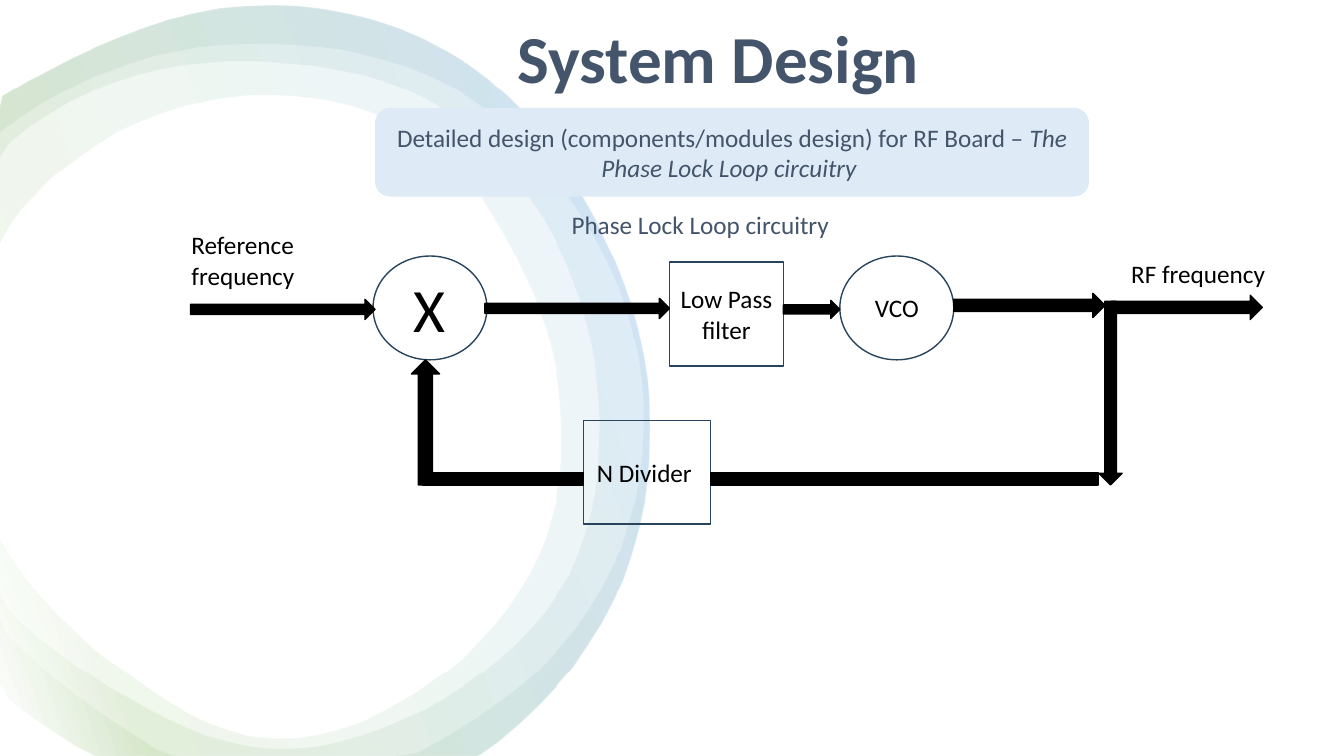
import math

from lxml import etree
from pptx import Presentation
from pptx import util as u
from pptx.dml import color
from pptx.enum import shapes, text
from pptx.oxml import ns

PX = 9144
WIDTH, HEIGHT = 1333, 750
SLATE, BLACK, NAVY, PALE = "44546A", "000000", "28445D", "DEEBF7"
WHITE, GREEN, BLUE = "FFFFFF", "70AD47", "5B9BD5"
kinds = shapes.MSO_SHAPE
rgb = color.RGBColor.from_string
centered = {"anchor": text.MSO_ANCHOR.MIDDLE, "align": text.PP_ALIGN.CENTER}
from_top_left = {"anchor": text.MSO_ANCHOR.TOP, "align": text.PP_ALIGN.LEFT}


def loop_edge(radii, center=(270, 400), steps=8):
    count = len(radii)
    edge = []
    for spoke in range(count):
        a, b, c, d = (radii[(spoke + shift) % count] for shift in (-1, 0, 1, 2))
        for step in range(steps):
            t = step / steps
            radius = (2 * b + (c - a) * t + (2 * a - 5 * b + 4 * c - d) * t ** 2
                      + (3 * b - a - 3 * c + d) * t ** 3) / 2
            angle = math.tau * (spoke + t) / count
            x = center[0] + radius * math.cos(angle)
            y = center[1] + radius * math.sin(angle)
            edge.append((max(x, 0), min(y, HEIGHT)))
    return edge


def write(shape, runs, ink, anchor, align, size=18, spacing=1.0, bold=False):
    frame = shape.text_frame
    line = frame.paragraphs[0]
    for target, formats in (
        (frame, {"word_wrap": True, "vertical_anchor": anchor}),
        (line, {"alignment": align, "line_spacing": spacing}),
    ):
        for key, value in formats.items():
            setattr(target, key, value)
    for wording, italic in runs:
        run = line.add_run()
        run.text = wording
        formats = {"name": "Calibri", "size": u.Pt(size), "bold": bold, "italic": italic}
        for key, value in formats.items():
            setattr(run.font, key, value)
        run.font.color.rgb = rgb(ink)


deck = Presentation()
deck.slide_width, deck.slide_height = WIDTH * PX, HEIGHT * PX
slide = deck.slides.add_slide(deck.slide_layouts[6])
canvas = slide.shapes

outer_radii = [373, 390, 405, 420, 392, 400, 400, 420, 395, 394, 388, 368]
inner_radii = {
    "broad": [323, 339, 338, 342, 324, 335, 340, 370, 357, 338, 337, 323],
    "wide": [285, 304, 318, 332, 303, 300, 310, 314, 309, 305, 302, 281],
    "thin": [367, 374, 372, 380, 350, 350, 350, 385, 369, 356, 360, 358],
}
tints = {2: WHITE, 16: GREEN, 85: BLUE, 100: WHITE}
for radii in inner_radii.values():
    rim = loop_edge(outer_radii)
    hole = loop_edge(radii)[::-1]
    builder = canvas.build_freeform(*rim[0], scale=PX)
    builder.add_line_segments(rim[1:], close=True)
    builder.move_to(*hole[0])
    builder.add_line_segments(hole[1:], close=True)
    ring = builder.convert_to_shape()
    ring.shadow.inherit = False
    ring.line.fill.background()
    ring.fill.gradient()
    ring.fill.gradient_angle = 20
    stops = ring._element.spPr.find(".//" + ns.qn("a:gsLst"))
    for old_stop in list(stops):
        stops.remove(old_stop)
    for percent, tint in tints.items():
        stop = etree.SubElement(stops, ns.qn("a:gs"), pos=str(percent * 1000))
        shade = etree.SubElement(stop, ns.qn("a:srgbClr"), val=tint)
        etree.SubElement(shade, ns.qn("a:alpha"), val="10000")

stage_w, stage_h = 113, 103
oval_top, filter_top, divider_top = 254, 260, 417
mixer_x, filter_x, vco_x = 370, 664, 833
divider_x, divider_w = 579, 126
mixer_end, filter_end, vco_end, divider_end = (
    mixer_x + stage_w, filter_x + stage_w, vco_x + stage_w, divider_x + divider_w)
return_x, return_end, return_y, return_h = 419, 1089, 469, 12
return_bottom = return_y + return_h
mixer_bottom, tap_top = oval_top + stage_h, 299

banner_style = {"paint": PALE, "edge": None, "ink": SLATE}
stage_style = {"paint": None, "edge": NAVY, "ink": BLACK}
wire_style = {"paint": BLACK, "edge": BLACK, "ink": BLACK}

banner_runs = [("Detailed design (components/modules design) for RF Board – ", False),
               ("The Phase Lock Loop circuitry ", True)]
stages = [
    (kinds.OVAL, (vco_x, oval_top, stage_w, stage_h), "VCO", 18),
    (kinds.RECTANGLE, (filter_x, filter_top, stage_w, stage_h), "Low Pass filter", 18),
    (kinds.RECTANGLE, (divider_x, divider_top, divider_w, stage_h), "N Divider ", 18),
    (kinds.OVAL, (mixer_x, oval_top, stage_w, stage_h), "X", 44),
]
wires = [
    (kinds.RIGHT_ARROW, (vco_end, 291, 150, 24)),
    (kinds.RIGHT_ARROW, (filter_end, 298, vco_x - filter_end, 18)),
    (kinds.RECTANGLE, (divider_end, return_y, return_end - divider_end, return_h)),
    (kinds.RECTANGLE, (return_x, return_y, divider_x - return_x, return_h)),
    (kinds.DOWN_ARROW, (1090, tap_top, 23, return_bottom - tap_top)),
    (kinds.UP_ARROW, (408, mixer_bottom, 28, return_bottom - mixer_bottom)),
    (kinds.RIGHT_ARROW, (mixer_end - 2, 296, filter_x - mixer_end + 2, 20)),
    (kinds.RIGHT_ARROW, (189, 297, mixer_x - 187, 20)),
    (kinds.RIGHT_ARROW, (1102, 293, 150, 24)),
]
parts = [(kinds.ROUNDED_RECTANGLE, (372, 107, 708, 88), banner_style, banner_runs, 18)]
parts += [(kind, box, stage_style, [(wording, False)], size)
          for kind, box, wording, size in stages]
parts += [(kind, box, wire_style, [], 18) for kind, box in wires]

for kind, box, style, runs, size in parts:
    part = canvas.add_shape(kind, *(side * PX for side in box))
    part.shadow.inherit = False
    part.line.width = u.Pt(1)
    for fill, tint in ((part.fill, style["paint"]), (part.line.fill, style["edge"])):
        if tint:
            fill.solid()
            fill.fore_color.rgb = rgb(tint)
        else:
            fill.background()
    write(part, runs, style["ink"], size=size, **centered)

title_style = {**centered, "size": 48, "spacing": 0.9, "bold": True}
labels = [
    ("System Design", (311, 0, 803, 123), SLATE, title_style),
    ("Phase Lock Loop circuitry", (557, 203, 711, 40), SLATE, from_top_left),
    ("Reference frequency", (180, 223, 175, 71), BLACK, from_top_left),
    ("RF frequency", (1112, 251, 175, 40), BLACK, from_top_left),
]
for wording, box, ink, style in labels:
    label = canvas.add_textbox(*(side * PX for side in box))
    write(label, [(wording, False)], ink, **style)

deck.save("out.pptx")
